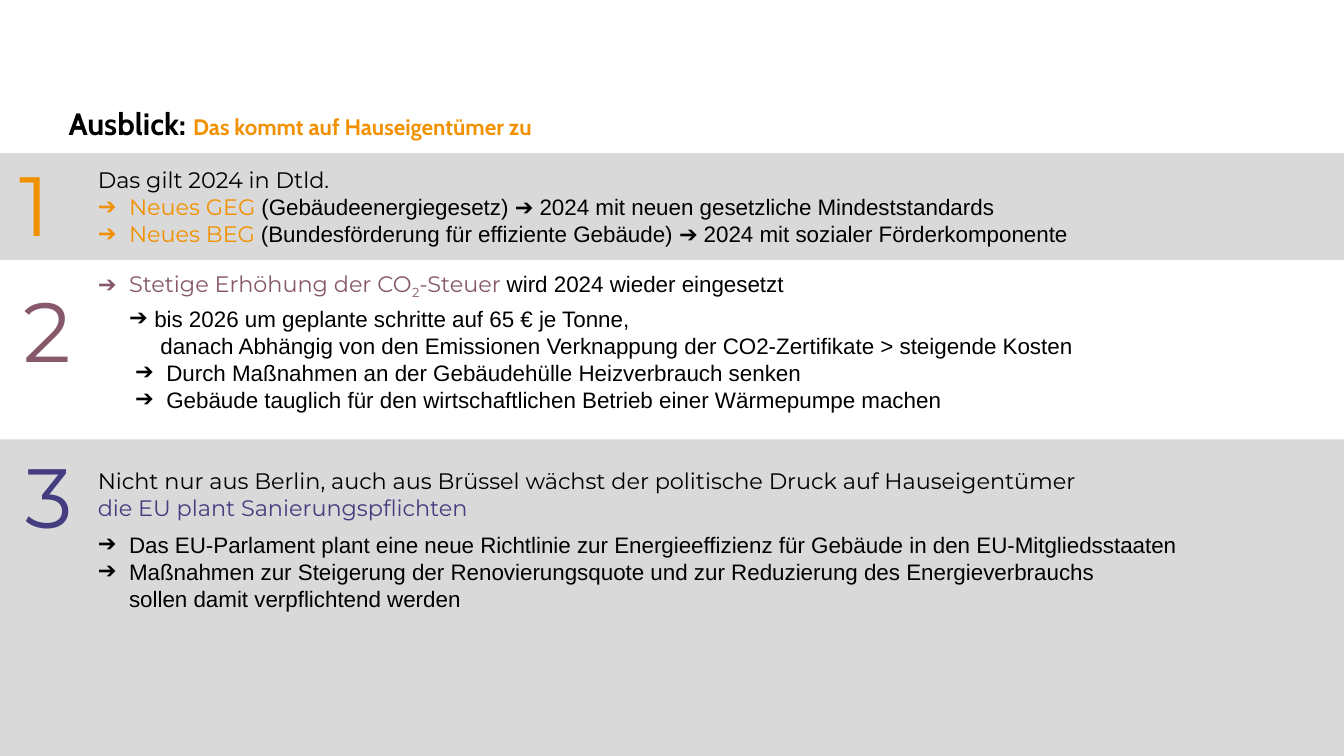
from dataclasses import dataclass

import lxml.etree
import pptx
import pptx.dml.color
import pptx.enum.shapes
import pptx.enum.text
import pptx.oxml.ns
import pptx.util
from pptx.util import Inches


@dataclass(frozen=True)
class Theme:
    black: str = "000000"
    orange: str = "F29100"
    mauve: str = "87586B"
    violet: str = "443D7F"
    band: str = "D9D9D9"
    heading_font: str = "Cabin"
    accent_font: str = "Montserrat"
    body_font: str = "Arial"
    title_size: float = 22
    body_size: float = 16
    numeral_size: float = 60
    line_pitch: float = 19.3


THEME = Theme()


@dataclass(frozen=True)
class Span:
    text: str
    color: str = THEME.black
    font: str = THEME.body_font
    size: float | None = None
    subscript: bool = False
    new_line: bool = False


@dataclass(frozen=True)
class Line:
    spans: tuple[Span, ...]
    left: float = 0
    hanging: float = 0
    before: float = 0


@dataclass(frozen=True)
class Numeral:
    text: str
    left: float
    top: float
    color: str


@dataclass(frozen=True)
class Band:
    top: float
    height: float


def accent(text: str, color: str = THEME.black, **options: bool) -> Span:
    return Span(text, color, THEME.accent_font, **options)


def bullet(*spans: Span, left: float = 0.31, hanging: float = 0.31, before: float = 0) -> Line:
    return Line(spans, left, hanging, before)


BANDS = (Band(6.83, 0.67), Band(1.52, 1.06), Band(4.36, 2.7))

NUMERALS = (
    Numeral("1", 0.09, 1.46, THEME.orange),
    Numeral("2", 0.13, 2.71, THEME.mauve),
    Numeral("3", 0.15, 4.36, THEME.violet),
)

TITLE = (
    Span("Ausblick: ", THEME.black, THEME.heading_font, THEME.title_size),
    Span("Das kommt auf Hauseigentümer zu", THEME.orange, THEME.heading_font, THEME.body_size),
)

BODY = (
    Line((accent("Das gilt 2024 in Dtld."),)),
    bullet(
        accent("Neues GEG ", THEME.orange),
        Span("(Gebäudeenergiegesetz) ➔ 2024 mit neuen gesetzliche Mindeststandards"),
    ),
    bullet(
        accent("Neues BEG ", THEME.orange),
        Span("(Bundesförderung für effiziente Gebäude) ➔ 2024 mit sozialer Förderkomponente"),
    ),
    bullet(
        accent("Stetige Erhöhung der CO", THEME.mauve),
        accent("2", THEME.mauve, subscript=True),
        accent("-Steuer ", THEME.mauve),
        Span("wird 2024 wieder eingesetzt"),
        before=18.6,
    ),
    bullet(Span("bis 2026 um geplante schritte auf 65 € je Tonne,"), left=0.56, hanging=0.25, before=2.9),
    Line(
        (Span("danach Abhängig von den Emissionen Verknappung der CO2-Zertifikate > steigende Kosten"),),
        left=0.62,
    ),
    bullet(Span("Durch Maßnahmen an der Gebäudehülle Heizverbrauch senken"), left=0.68),
    bullet(Span("Gebäude tauglich für den wirtschaftlichen Betrieb einer Wärmepumpe machen"), left=0.68),
    Line(
        (
            accent("Nicht nur aus Berlin, auch aus Brüssel wächst der politische Druck auf Hauseigentümer"),
            accent("die EU plant Sanierungspflichten", THEME.violet, new_line=True),
        ),
        before=38.6,
    ),
    bullet(
        Span(
            "Das EU-Parlament plant eine neue Richtlinie zur Energieeffizienz "
            "für Gebäude in den EU-Mitgliedsstaaten"
        ),
        before=7.1,
    ),
    bullet(
        Span("Maßnahmen zur Steigerung der Renovierungsquote und zur Reduzierung des Energieverbrauchs"),
        Span("sollen damit verpflichtend werden", new_line=True),
    ),
)


def rgb(color: str) -> pptx.dml.color.RGBColor:
    return pptx.dml.color.RGBColor.from_string(color)


def place(shape, left: float, top: float, width: float, height: float, wrap: bool = True):
    """Position a text shape and return its top-anchored text frame."""
    shape.left, shape.top = Inches(left), Inches(top)
    shape.width, shape.height = Inches(width), Inches(height)
    frame = shape.text_frame
    frame.word_wrap = wrap
    frame.auto_size = pptx.enum.text.MSO_AUTO_SIZE.NONE
    frame.vertical_anchor = pptx.enum.text.MSO_ANCHOR.TOP
    return frame


def add_spans(paragraph, spans: tuple[Span, ...]) -> None:
    for span in spans:
        if span.new_line:
            paragraph.add_line_break()
        run = paragraph.add_run()
        run.text = span.text
        run.font.name = span.font
        run.font.color.rgb = rgb(span.color)
        if span.size:
            run.font.size = pptx.util.Pt(span.size)
        if span.subscript:
            run._r.get_or_add_rPr().set("baseline", "-25000")


def set_bullet(paragraph, line: Line) -> None:
    """Apply the hanging indent with an arrow, or no bullet at all."""
    properties = paragraph._p.get_or_add_pPr()
    properties.set("marL", str(Inches(line.left)))
    properties.set("indent", str(-Inches(line.hanging)))
    qualify = pptx.oxml.ns.qn
    if not line.hanging:
        lxml.etree.SubElement(properties, qualify("a:buNone"))
        return
    color = lxml.etree.SubElement(properties, qualify("a:buClr"))
    lxml.etree.SubElement(color, qualify("a:srgbClr"), val=line.spans[0].color)
    lxml.etree.SubElement(properties, qualify("a:buFont"), typeface=THEME.body_font)
    lxml.etree.SubElement(properties, qualify("a:buChar"), char="➔")


def add_band(slide, band: Band, width: int) -> None:
    """Draw a full-width band behind the placeholders."""
    shape = slide.shapes.add_shape(
        pptx.enum.shapes.MSO_SHAPE.RECTANGLE, 0, Inches(band.top), width, Inches(band.height)
    )
    shape.shadow.inherit = False
    shape.fill.solid()
    shape.fill.fore_color.rgb = rgb(THEME.band)
    shape.line.fill.background()
    slide.shapes._spTree.insert(2, shape._element)


def fill_title(slide) -> None:
    paragraph = place(slide.shapes.title, 0.58, 0.99, 5.66, 0.47, wrap=False).paragraphs[0]
    paragraph.alignment = pptx.enum.text.PP_ALIGN.LEFT
    paragraph.font.bold = True
    add_spans(paragraph, TITLE)


def fill_body(slide) -> None:
    frame = place(slide.placeholders[1], 0.87, 1.6, 11.74, 4.51)
    for index, line in enumerate(BODY):
        paragraph = frame.add_paragraph() if index else frame.paragraphs[0]
        set_bullet(paragraph, line)
        paragraph.line_spacing = pptx.util.Pt(THEME.line_pitch)
        paragraph.space_before = pptx.util.Pt(line.before)
        paragraph.font.size = pptx.util.Pt(THEME.body_size)
        add_spans(paragraph, line.spans)


def add_numeral(slide, numeral: Numeral) -> None:
    paragraph = place(slide.shapes.add_textbox(0, 0, 0, 0), numeral.left, numeral.top, 0.42, 1.11).paragraphs[0]
    paragraph.font.size = pptx.util.Pt(THEME.numeral_size)
    add_spans(paragraph, (accent(numeral.text, numeral.color),))


def main() -> None:
    presentation = pptx.Presentation()
    presentation.slide_width, presentation.slide_height = Inches(13.33), Inches(7.5)
    slide = presentation.slides.add_slide(presentation.slide_layouts[1])
    for band in BANDS:
        add_band(slide, band, presentation.slide_width)
    fill_title(slide)
    fill_body(slide)
    for numeral in NUMERALS:
        add_numeral(slide, numeral)
    presentation.save("out.pptx")


if __name__ == "__main__":
    main()
